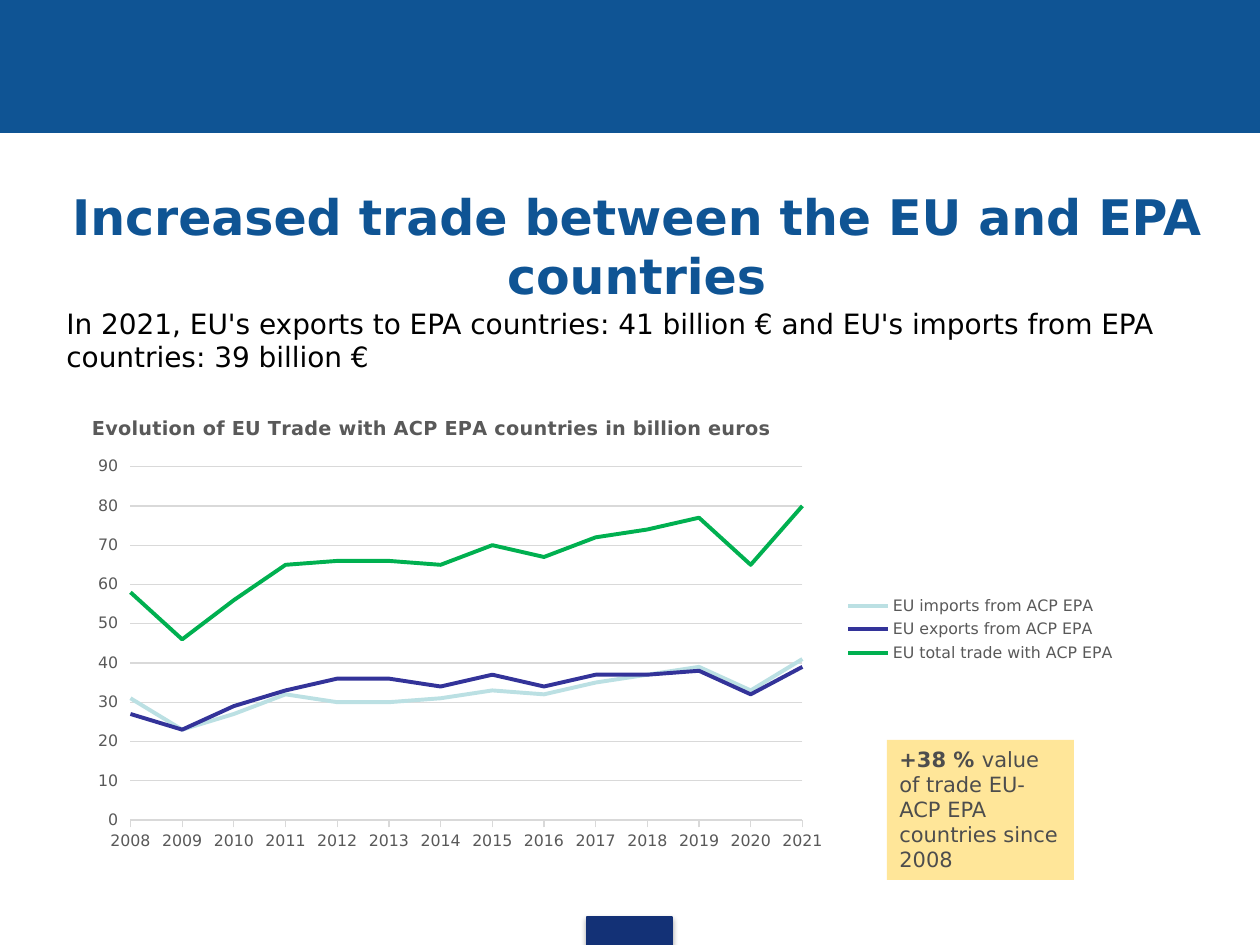
from dataclasses import dataclass

from lxml import etree
from pptx import Presentation
from pptx.chart.data import CategoryChartData
from pptx.dml.color import RGBColor
from pptx.enum.chart import XL_CHART_TYPE, XL_LEGEND_POSITION, XL_TICK_MARK
from pptx.enum.shapes import MSO_SHAPE
from pptx.enum.text import MSO_ANCHOR, MSO_AUTO_SIZE, PP_ALIGN
from pptx.oxml.ns import qn
from pptx.util import Emu, Pt

PX_PER_INCH = 126
TITLE_ONLY = 5
RECTANGLE = MSO_SHAPE.RECTANGLE
LINE_CHART = XL_CHART_TYPE.LINE
LEGEND_RIGHT = XL_LEGEND_POSITION.RIGHT
TICK_OUT, TICK_NONE = XL_TICK_MARK.OUTSIDE, XL_TICK_MARK.NONE
LEFT, CENTER = PP_ALIGN.LEFT, PP_ALIGN.CENTER
TOP, MIDDLE = MSO_ANCHOR.TOP, MSO_ANCHOR.MIDDLE
NO_FIT = MSO_AUTO_SIZE.NONE

YEARS = [str(year) for year in range(2008, 2022)]
TRADE = {
    "EU imports from ACP EPA": [31, 23, 27, 32, 30, 30, 31, 33, 32, 35, 37, 39, 33, 41],
    "EU exports from ACP EPA": [27, 23, 29, 33, 36, 36, 34, 37, 34, 37, 37, 38, 32, 39],
    "EU total trade with ACP EPA": [58, 46, 56, 65, 66, 66, 65, 70, 67, 72, 74, 77, 65, 80],
}


@dataclass(frozen=True)
class Theme:
    font: str = "DejaVu Sans"
    blue: str = "0F5494"
    navy: str = "133176"
    black: str = "000000"
    callout_fill: str = "FFE699"
    callout_text: str = "4D4D4D"
    chart_text: str = "595959"
    grid: str = "D9D9D9"
    series: tuple = ("BBE0E3", "333399", "00B050")
    title_size: int = 28
    body_size: int = 16
    callout_size: int = 12
    chart_title_size: int = 11
    label_size: int = 9


def px(length):
    return Emu(round(length * 914400 / PX_PER_INCH))


def set_layout(element, **values):
    """Place a chart part by hand, in fractions of the chart's size."""
    layout = element.find(qn("c:layout"))
    if layout is None:
        layout = etree.Element(qn("c:layout"))
        text = element.find(qn("c:tx"))
        if text is None:
            element.insert(0, layout)
        else:
            text.addnext(layout)
    manual = etree.SubElement(layout, qn("c:manualLayout"))
    for tag, value in values.items():
        etree.SubElement(manual, qn(f"c:{tag}"), val=str(value))


class SlideBuilder:
    def __init__(self, slide, theme):
        self.slide = slide
        self.theme = theme

    def style(self, font, size, color, bold=False):
        settings = {"name": self.theme.font, "size": Pt(size), "bold": bold}
        for name, value in settings.items():
            setattr(font, name, value)
        font.color.rgb = RGBColor.from_string(color)

    def line(self, line, color, width):
        line.color.rgb = RGBColor.from_string(color)
        line.width = Pt(width)

    def fill_text(self, frame, runs, size, color, align=LEFT, anchor=TOP):
        """Fill a frame with one paragraph of (text, bold) runs."""
        settings = {"word_wrap": True, "auto_size": NO_FIT, "vertical_anchor": anchor}
        for name, value in settings.items():
            setattr(frame, name, value)
        paragraph = frame.paragraphs[0]
        paragraph.alignment = align
        for text, bold in runs:
            run = paragraph.add_run()
            run.text = text
            self.style(run.font, size, color, bold)
        return paragraph

    def title(self, text, box, indent):
        title = self.slide.shapes.title
        for name, value in zip(("left", "top", "width", "height"), box):
            setattr(title, name, px(value))
        paragraph = self.fill_text(title.text_frame, [(text, True)], self.theme.title_size,
                                   self.theme.blue, CENTER, MIDDLE)
        properties = paragraph._p.get_or_add_pPr()
        properties.set("marL", str(px(indent)))
        properties.set("indent", "0")

    def text(self, text, box):
        frame = self.slide.shapes.add_textbox(*map(px, box)).text_frame
        self.fill_text(frame, [(text, False)], self.theme.body_size, self.theme.black)

    def rectangle(self, box, fill, outlined=True, shadow=False):
        shape = self.slide.shapes.add_shape(RECTANGLE, *map(px, box))
        if not shadow:
            shape.shadow.inherit = False
        shape.fill.solid()
        shape.fill.fore_color.rgb = RGBColor.from_string(fill)
        if outlined:
            self.line(shape.line, fill, 0.75)
        else:
            shape.line.fill.background()
        return shape

    def callout(self, runs, box):
        shape = self.rectangle(box, self.theme.callout_fill, outlined=False)
        self.fill_text(shape.text_frame, runs, self.theme.callout_size, self.theme.callout_text)

    def line_chart(self, title, categories, series, box):
        theme = self.theme
        data = CategoryChartData(number_format="0")
        data.categories = categories
        for name, values in series.items():
            data.add_series(name, values)
        chart = self.slide.shapes.add_chart(LINE_CHART, *map(px, box), data).chart
        self.style(chart.font, theme.label_size, theme.chart_text)

        heading = chart.chart_title
        self.fill_text(heading.text_frame, [(title, True)], theme.chart_title_size,
                       theme.chart_text)
        set_layout(heading._element, xMode="edge", yMode="edge", x=0.01, y=0.03)
        set_layout(chart._chartSpace.chart.plotArea, layoutTarget="inner", xMode="edge",
                   yMode="edge", x=0.05, y=0.15, w=0.64, h=0.76)

        chart.has_legend = True
        chart.legend.position = LEGEND_RIGHT
        chart.legend.include_in_layout = False
        self.style(chart.legend.font, theme.label_size, theme.chart_text)

        chart.plots[0].vary_by_categories = False
        for line_series, color in zip(chart.plots[0].series, theme.series):
            line_series.smooth = False
            self.line(line_series.format.line, color, 2.25)
        self.axes(chart)

    def axes(self, chart):
        years, amounts = chart.category_axis, chart.value_axis
        for axis in (years, amounts):
            axis.major_tick_mark = TICK_OUT
            axis.minor_tick_mark = TICK_NONE
            self.style(axis.tick_labels.font, self.theme.label_size, self.theme.chart_text)
        self.line(years.format.line, self.theme.grid, 0.75)
        amounts.format.line.fill.background()
        self.line(amounts.major_gridlines.format.line, self.theme.grid, 0.75)
        for name, value in {"minimum_scale": 0, "maximum_scale": 90, "major_unit": 10}.items():
            setattr(amounts, name, value)
        amounts.tick_labels.number_format = "0"
        amounts.tick_labels.number_format_is_linked = False

        # Lines start on the value axis rather than half a category away
        value_axis = amounts._element
        crossing = value_axis.find(qn("c:crossBetween"))
        if crossing is None:
            crossing = etree.Element(qn("c:crossBetween"))
            value_axis.find(qn("c:crosses")).addnext(crossing)
        crossing.set("val", "midCat")


def main():
    theme = Theme()
    presentation = Presentation()
    presentation.slide_width, presentation.slide_height = px(1260), px(945)
    slide = presentation.slides.add_slide(presentation.slide_layouts[TITLE_ONLY])
    builder = SlideBuilder(slide, theme)

    builder.rectangle((0, 0, 1260, 132), theme.blue)
    builder.rectangle((587, 917, 85, 28), theme.navy, shadow=True)
    builder.title("Increased trade between the EU and EPA countries", (-47, 195, 1318, 100), 49)
    builder.text("In 2021, EU's exports to EPA countries: 41 billion € and EU's imports "
                 "from EPA countries: 39 billion €", (54, 300, 1206, 81))
    builder.callout([("+38 % ", True), ("value of trade EU-ACP EPA countries since 2008", False)],
                    (887, 740, 187, 140))
    builder.line_chart("Evolution of EU Trade with ACP EPA countries in billion euros",
                       YEARS, TRADE, (78, 397, 1050, 465))
    presentation.save("out.pptx")


if __name__ == "__main__":
    main()
